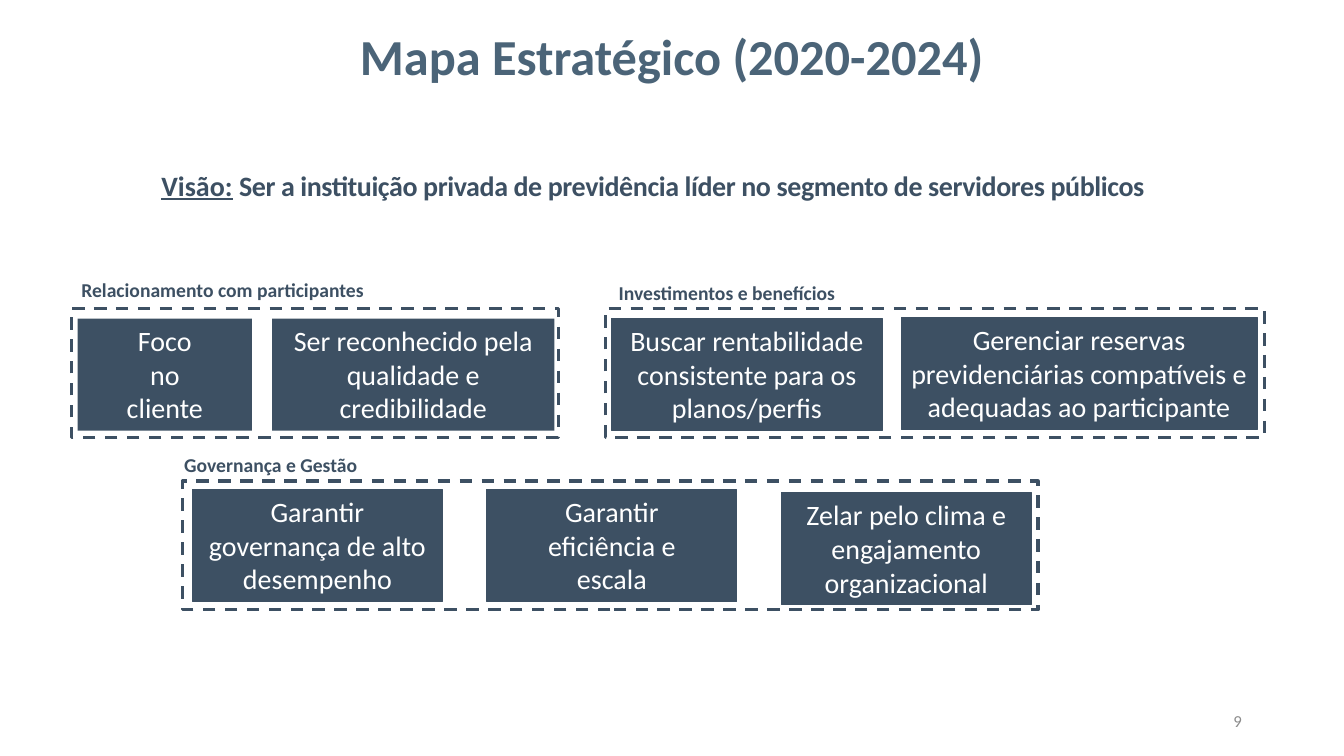
from dataclasses import dataclass

from pptx import Presentation
from pptx.dml.color import RGBColor
from pptx.enum.dml import MSO_LINE
from pptx.enum.shapes import MSO_SHAPE
from pptx.enum.text import MSO_ANCHOR, MSO_AUTO_SIZE, PP_ALIGN
from pptx.util import Cm, Pt


@dataclass(frozen=True)
class Theme:
    font: str = "Calibri"
    navy: RGBColor = RGBColor(0x3D, 0x50, 0x63)
    title: RGBColor = RGBColor(0x4B, 0x64, 0x78)
    white: RGBColor = RGBColor(0xFF, 0xFF, 0xFF)
    grey: RGBColor = RGBColor(0x8C, 0x8C, 0x8C)
    title_size: int = 36
    body_size: int = 20
    label_size: int = 14
    number_size: int = 12


T = Theme()
GOAL_H = 2.82
FRAME_H = 3.25

# Each perspective: label, label (x, y), frame (x, y, width), outlined goals,
# goals as (lines, x, y, width); all lengths in cm.
PERSPECTIVES = [
    ("Relacionamento com participantes", (1.8, 6.88), (1.8, 7.77, 12.27), False, [
        (["Foco", "no", "cliente"], 1.96, 8.03, 4.39),
        (["Ser reconhecido pela qualidade e credibilidade"], 6.86, 8.03, 7.11),
    ]),
    ("Governança e Gestão", (4.39, 11.28), (4.6, 12.12, 21.56), True, [
        (["Garantir governança de alto desempenho"], 4.85, 12.34, 6.3),
        (["Garantir", "eficiência e", "escala"], 12.27, 12.34, 6.3),
        (["Zelar pelo clima e engajamento organizacional"], 19.69, 12.42, 6.3),
    ]),
    ("Investimentos e benefícios", (15.34, 6.96), (15.27, 7.77, 16.59), True, [
        (["Buscar rentabilidade consistente para os planos/perfis"], 15.42, 8.03, 6.81),
        (["Gerenciar reservas previdenciárias compatíveis e adequadas ao participante"],
         22.71, 8, 8.97),
    ]),
]


def add_run(p, text, size, color, bold=False, underline=False):
    r = p.add_run()
    r.text = text
    r.font.name = T.font
    r.font.size = Pt(size)
    r.font.color.rgb = color
    r.font.bold = bold
    r.font.underline = underline
    return r


def add_text_box(s, x, y, w, h, align=PP_ALIGN.LEFT, anchor=MSO_ANCHOR.TOP):
    """Add a wrapping text box and return its first paragraph."""
    tf = s.shapes.add_textbox(Cm(x), Cm(y), Cm(w), Cm(h)).text_frame
    tf.word_wrap = True
    tf.vertical_anchor = anchor
    p = tf.paragraphs[0]
    p.alignment = align
    return p


def add_rect(s, x, y, w, h):
    sp = s.shapes.add_shape(MSO_SHAPE.RECTANGLE, Cm(x), Cm(y), Cm(w), Cm(h))
    sp.shadow.inherit = False
    return sp


def add_goal(s, lines, x, y, w, outlined):
    sp = add_rect(s, x, y, w, GOAL_H)
    sp.fill.solid()
    sp.fill.fore_color.rgb = T.navy
    if outlined:
        sp.line.color.rgb = T.navy
        sp.line.width = Pt(0.75)
    else:
        sp.line.fill.background()
    tf = sp.text_frame
    tf.word_wrap = True
    tf.auto_size = MSO_AUTO_SIZE.SHAPE_TO_FIT_TEXT
    tf.vertical_anchor = MSO_ANCHOR.TOP
    for i, line in enumerate(lines):
        p = tf.add_paragraph() if i else tf.paragraphs[0]
        p.alignment = PP_ALIGN.CENTER
        add_run(p, line, T.body_size, T.white)


def add_frame(s, x, y, w):
    sp = add_rect(s, x, y, w, FRAME_H)
    sp.fill.background()
    sp.line.color.rgb = T.navy
    sp.line.width = Pt(2.25)
    sp.line.dash_style = MSO_LINE.DASH


def add_perspective(s, label, label_at, frame, outlined, goals):
    for lines, x, y, w in goals:
        add_goal(s, lines, x, y, w, outlined)
    add_frame(s, *frame)
    p = add_text_box(s, *label_at, 11.02, 0.86)
    add_run(p, label, T.label_size, T.navy, bold=True)


def add_title(s):
    p = add_text_box(s, 0, 0, 33.87, 3, PP_ALIGN.CENTER, MSO_ANCHOR.MIDDLE)
    p.line_spacing = 0.9
    add_run(p, "Mapa Estratégico (2020-2024)", T.title_size, T.title, bold=True)


def add_vision(s):
    p = add_text_box(s, 3.15, 4.11, 26.59, 1.12, PP_ALIGN.CENTER)
    add_run(p, "Visão:", T.body_size, T.navy, bold=True, underline=True)
    add_run(p, " ", T.body_size, T.navy, bold=True)
    r = add_run(p, "Ser a instituição privada de previdência líder no segmento "
                "de servidores públicos", T.body_size, T.navy, bold=True)
    r.font._element.set("spc", "-30")


def add_page_number(s):
    p = add_text_box(s, 23.93, 17.65, 7.62, 1.02, PP_ALIGN.RIGHT, MSO_ANCHOR.MIDDLE)
    add_run(p, "9", T.number_size, T.grey)


def main():
    prs = Presentation()
    prs.slide_width, prs.slide_height = Cm(33.87), Cm(19.05)
    s = prs.slides.add_slide(prs.slide_layouts[6])
    add_title(s)
    add_vision(s)
    for perspective in PERSPECTIVES:
        add_perspective(s, *perspective)
    add_page_number(s)
    prs.save("out.pptx")


if __name__ == "__main__":
    main()
